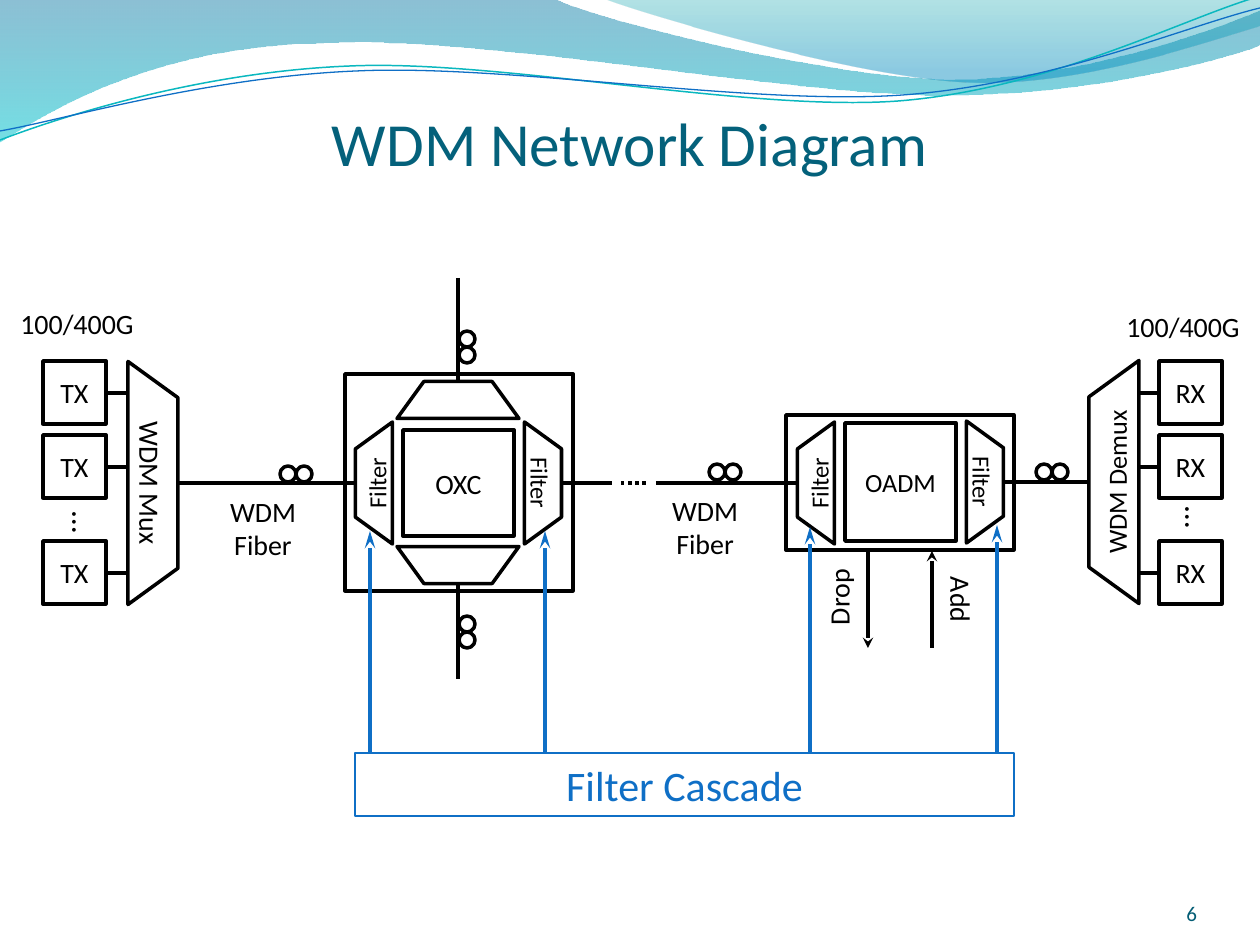
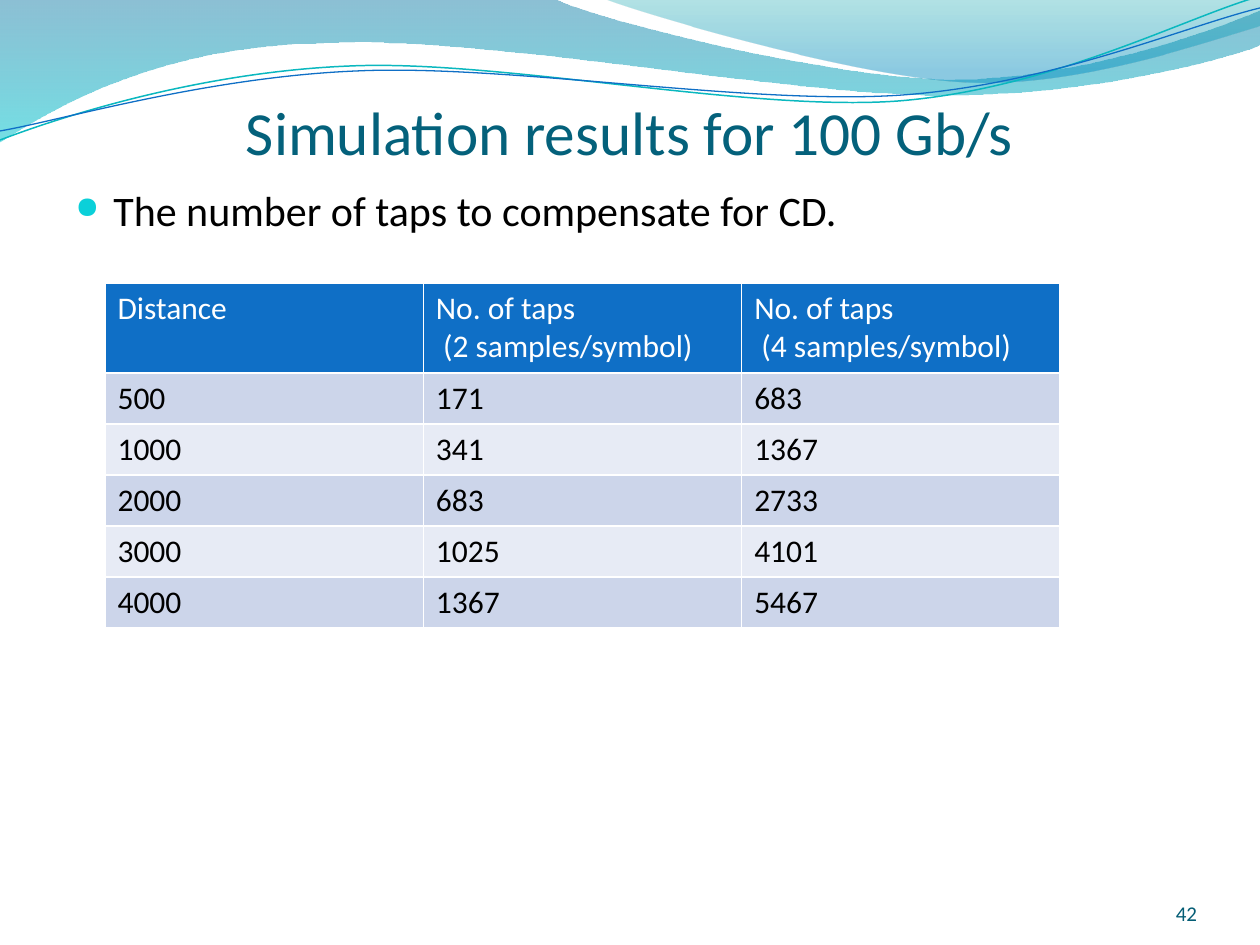
from lxml.etree import SubElement
from pptx import Presentation
from pptx.dml.color import RGBColor
from pptx.enum.dml import MSO_LINE
from pptx.enum.shapes import MSO_CONNECTOR, MSO_SHAPE
from pptx.enum.text import MSO_ANCHOR, PP_ALIGN
from pptx.oxml.ns import qn
from pptx.util import Pt

PX = 914400 / 126
FONT = "Calibri"
COLORS = {
    "title": "04617B", "number": "045D75", "text": "000000", "white": "FFFFFF",
    "blue": "0F6FC6", "teal": "0AB8BF", "bullet": "0BD0D9",
    "band_dark": "CCD5EA", "band_light": "E7EBF5",
    "wave_top": "0074A1", "wave_bottom": "00C6CF",
    "crest_top": "00A1A9", "crest_bottom": "008BBF",
}

# Outlines: each part is one point (a line) or three points (a Bezier curve).
WAVES = [
    {"path": [[(0, 0)], [(554, -1)],
              [(600, 21), (837, 79), (955, 79)], [(1075, 79), (1207, 33), (1260, 11)],
              [(1261, 45)], [(1239, 55), (1096, 96), (940, 95)],
              [(784, 95), (481, 35), (324, 43)], [(163, 45), (58, 105), (-1, 142)],
              [(0, 0)]],
     "stops": [(0, "wave_top", 45), (1, "wave_bottom", 55)]},
    {"path": [[(604, -1)], [(641, 14), (859, 78), (969, 82)],
              [(1079, 87), (1211, 40), (1260, 26)], [(1260, 0)], [(604, -1)]],
     "stops": [(0, "crest_top", 30), (0.8, "crest_bottom", 45)]},
    {"path": [[(0, 140)], [(60, 117), (199, 72), (349, 66)],
              [(498, 59), (747, 112), (898, 101)], [(1050, 89), (1182, 19), (1257, -3)]],
     "line": ("teal", 0.85)},
    {"path": [[(0, 131)], [(59, 121), (207, 77), (357, 71)],
              [(508, 64), (752, 106), (903, 95)], [(1053, 84), (1186, 26), (1260, 8)]],
     "line": ("blue", 0.75)},
]

# Network diagram
PORT_TOPS = [361, 435, 541]
PORT_SIZE = 63
PORTS = [("TX", 43, 106, 128), ("RX", 1159, 1139, 1159)]  # text, left, link from, link to
NODES = [  # box, core, core text, size
    ((345, 374, 228, 217), (403, 430, 111, 106), "OXC", 16),
    ((786, 415, 228, 135), (845, 423, 111, 118), "OADM", 15),
]
MUX_SIZE, FILTER_SIZE = (243, 50), (122, 37)
TRAPEZOIDS = [  # centre, size, rotation, text, text size
    ((153, 483), MUX_SIZE, 90, "WDM Mux", 16),
    ((1114, 482), MUX_SIZE, 270, "WDM Demux", 15),
    ((374, 483), FILTER_SIZE, 270, "Filter", 14),
    ((543, 483), FILTER_SIZE, 90, "Filter", 14),
    ((816, 483), FILTER_SIZE, 270, "Filter", 14),
    ((985, 482), FILTER_SIZE, 90, "Filter", 14),
    ((458, 400), FILTER_SIZE, 0, "", 14),
    ((458, 565), FILTER_SIZE, 180, "", 14),
]
FIBERS = [
    (178, 483, 355, 483), (562, 483, 612, 483), (656, 483, 798, 483),
    (1004, 482, 1089, 482), (458, 278, 458, 382), (458, 583, 458, 679),
]
FIBER_GAP = (621, 483, 646, 483)
DROP_ADD = [(868, 551, 868, 648), (932, 648, 932, 551)]
COIL = 16
COILS = [(280, 466, "h"), (709, 464, "h"), (1036, 464, "h"),
         (459, 331, "v"), (459, 616, "v")]
LABELS = [  # lines, box, rotation, size
    (["100/400G"], (6, 300, 142, 47), 0, 16),
    (["100/400G"], (1112, 303, 142, 47), 0, 16),
    (["WDM", "Fiber"], (192, 488, 142, 81), 0, 16),
    (["WDM", "Fiber"], (634, 487, 142, 81), 0, 16),
    (["…"], (61, 498, 48, 50), 90, 18),
    (["…"], (1174, 493, 48, 50), 90, 18),
    (["Drop"], (798, 573, 82, 47), 270, 16),
    (["Add"], (925, 577, 72, 47), 90, 16),
]
CASCADE_BOX = (355, 753, 659, 63)
CASCADE_TIPS = [(370, 531), (545, 531), (810, 527), (997, 525)]

# Simulation results
BULLET = "The number of taps to compensate for CD."
TAPS = [
    ["Distance", "No. of taps\n (2 samples/symbol)", "No. of taps\n (4 samples/symbol)"],
    ["500", "171", "683"],
    ["1000", "341", "1367"],
    ["2000", "683", "2733"],
    ["3000", "1025", "4101"],
    ["4000", "1367", "5467"],
]
TABLE_LEFT, TABLE_TOP, TABLE_WIDTH, HEADER_HEIGHT, ROW_HEIGHT = 105, 283, 955, 90, 51


def px(*values):
    return [round(v * PX) for v in values]


def rgb(name):
    return RGBColor.from_string(COLORS[name])


def write(tf, lines, size, color="text", align=PP_ALIGN.CENTER):
    for i, line in enumerate(lines):
        p = tf.paragraphs[0] if i == 0 else tf.add_paragraph()
        p.alignment = align
        r = p.add_run()
        r.text = line
        r.font.name, r.font.size, r.font.bold = FONT, Pt(size), False
        r.font.color.rgb = rgb(color)


def add_text(s, box, lines, size, color="text", align=PP_ALIGN.CENTER,
             anchor=MSO_ANCHOR.TOP, insets=None, wrap=True):
    sp = s.shapes.add_textbox(*px(*box))
    tf = sp.text_frame
    tf.word_wrap = wrap
    tf.vertical_anchor = anchor
    if insets:
        tf.margin_left, tf.margin_top, tf.margin_right, tf.margin_bottom = px(*insets)
    write(tf, lines, size, color, align)
    return sp


def add_outline(s, kind, box, text="", size=16, color="text", width=2,
                anchor=MSO_ANCHOR.MIDDLE):
    """Unfilled preset shape with a plain line and centred text."""
    sp = s.shapes.add_shape(kind, *px(*box))
    sp.shadow.inherit = False
    sp.fill.background()
    sp.line.color.rgb = rgb(color)
    sp.line.width = Pt(width)
    sp.text_frame.vertical_anchor = anchor
    if text:
        write(sp.text_frame, [text], size, color)
    return sp


def add_line(s, ends, color="text", arrow=None, dash=None):
    """Straight line; arrow is the length class of a stealth head at its end."""
    c = s.shapes.add_connector(MSO_CONNECTOR.STRAIGHT, *px(*ends))
    c.line.color.rgb = rgb(color)
    c.line.width = Pt(2)
    if dash:
        c.line.dash_style = dash
    if arrow:
        SubElement(c.line._get_or_add_ln(), qn("a:tailEnd"), type="stealth", len=arrow)
    SubElement(c._element.spPr, qn("a:effectLst"))


def build_curve(s, path, close):
    """Freeform whose three-point parts become Bezier curves."""
    points = [px(*point) for part in path for point in part]
    builder = s.shapes.build_freeform(*points[0])
    builder.add_line_segments(points[1:], close=close)
    sp = builder.convert_to_shape()
    outline = next(sp._element.spPr.iter(qn("a:path")))
    segments = iter(outline.findall(qn("a:lnTo")))
    for part in path[1:]:
        drawn = [next(segments) for _ in part]
        if len(part) == 3:
            curve = SubElement(outline, qn("a:cubicBezTo"))
            drawn[0].addprevious(curve)
            for segment in drawn:
                curve.append(segment[0])
                outline.remove(segment)
    return sp


def add_wave(s, path, stops=None, line=None):
    sp = build_curve(s, path, close=bool(stops))
    sp.shadow.inherit = False
    if line:
        sp.fill.background()
        sp.line.color.rgb = rgb(line[0])
        sp.line.width = Pt(line[1])
        return
    sp.line.fill.background()
    sp.fill.gradient()
    sp.fill.gradient_angle = 270
    for stop, (position, color, _) in zip(sp.fill.gradient_stops, stops):
        stop.position = position
        stop.color.rgb = rgb(color)
    for clr, (_, _, opacity) in zip(sp._element.spPr.iter(qn("a:srgbClr")), stops):
        SubElement(clr, qn("a:alpha"), val=str(opacity * 1000))


def new_slide(prs, title, title_top, number):
    s = prs.slides.add_slide(prs.slide_layouts[6])
    for wave in WAVES:
        add_wave(s, **wave)
    add_text(s, (63, title_top, 1134, 158), [title], 35, "title",
             anchor=MSO_ANCHOR.BOTTOM, insets=(0, 6, 0, 0))
    add_text(s, (1092, 876, 105, 50), [number], 12, "number", PP_ALIGN.RIGHT,
             MSO_ANCHOR.BOTTOM, (0, 0, 0, 0))
    return s


def add_network(s):
    for text, left, link_from, link_to in PORTS:
        for top in PORT_TOPS:
            add_outline(s, MSO_SHAPE.RECTANGLE, (left, top, PORT_SIZE, PORT_SIZE), text)
            y = top + PORT_SIZE // 2 + 1
            add_line(s, (link_from, y, link_to, y))
    for box, core, text, size in NODES:
        add_outline(s, MSO_SHAPE.RECTANGLE, box)
        add_outline(s, MSO_SHAPE.RECTANGLE, core, text, size)
    for (cx, cy), (w, h), rotation, text, size in TRAPEZOIDS:
        sp = add_outline(s, MSO_SHAPE.TRAPEZOID, (cx - w / 2, cy - h / 2, w, h), text, size)
        sp.adjustments[0] = 0.726
        sp.rotation = rotation
    for ends in FIBERS:
        add_line(s, ends)
    add_line(s, FIBER_GAP, dash=MSO_LINE.ROUND_DOT)
    for ends in DROP_ADD:
        add_line(s, ends, arrow="med")
    for left, top, direction in COILS:
        for i in range(2):
            dx, dy = (i * COIL, 0) if direction == "h" else (0, i * COIL)
            add_outline(s, MSO_SHAPE.OVAL, (left + dx, top + dy, COIL, COIL))
    for lines, box, rotation, size in LABELS:
        align = PP_ALIGN.LEFT if rotation else PP_ALIGN.CENTER
        sp = add_text(s, box, lines, size, align=align, wrap=not rotation)
        sp.rotation = rotation


def add_cascade(s):
    for x, tip in CASCADE_TIPS:
        add_line(s, (x, CASCADE_BOX[1], x, tip), "blue", arrow="lg")
    add_outline(s, MSO_SHAPE.RECTANGLE, CASCADE_BOX, "Filter Cascade", 24, "blue", 0.75,
                MSO_ANCHOR.TOP)


def add_bullet(s):
    sp = add_text(s, (63, 178, 1134, 605), [BULLET], 24, align=PP_ALIGN.LEFT)
    pPr = sp.text_frame.paragraphs[0]._p.get_or_add_pPr()
    indent = px(38)[0]
    pPr.set("marL", str(indent))
    pPr.set("indent", str(-indent))
    SubElement(SubElement(pPr, qn("a:buClr")), qn("a:srgbClr"), val=COLORS["bullet"])
    SubElement(pPr, qn("a:buSzPct"), val="72000")
    SubElement(pPr, qn("a:buChar"), char="●")


def add_borders(cell):
    tcPr = cell._tc.get_or_add_tcPr()
    for side in ("lnL", "lnR", "lnT", "lnB"):
        ln = SubElement(tcPr, qn("a:" + side), w=str(Pt(1)))
        SubElement(SubElement(ln, qn("a:solidFill")), qn("a:srgbClr"), val=COLORS["white"])


def add_taps_table(s):
    rows, cols = len(TAPS), len(TAPS[0])
    height = HEADER_HEIGHT + ROW_HEIGHT * (rows - 1)
    box = px(TABLE_LEFT, TABLE_TOP, TABLE_WIDTH, height)
    table = s.shapes.add_table(rows, cols, *box).table
    for i, row in enumerate(TAPS):
        table.rows[i].height = px(ROW_HEIGHT if i else HEADER_HEIGHT)[0]
        fill = ("band_dark" if i % 2 else "band_light") if i else "blue"
        for j, text in enumerate(row):
            cell = table.cell(i, j)
            add_borders(cell)
            cell.fill.solid()
            cell.fill.fore_color.rgb = rgb(fill)
            write(cell.text_frame, text.split("\n"), 18, "text" if i else "white",
                  PP_ALIGN.LEFT)


def main():
    prs = Presentation()
    prs.slide_width, prs.slide_height = px(1260, 945)

    s = new_slide(prs, "WDM Network Diagram", 21, "6")
    add_network(s)
    add_cascade(s)

    s = new_slide(prs, "Simulation results for 100 Gb/s", 10, "42")
    add_bullet(s)
    add_taps_table(s)

    prs.save("out.pptx")


if __name__ == "__main__":
    main()
